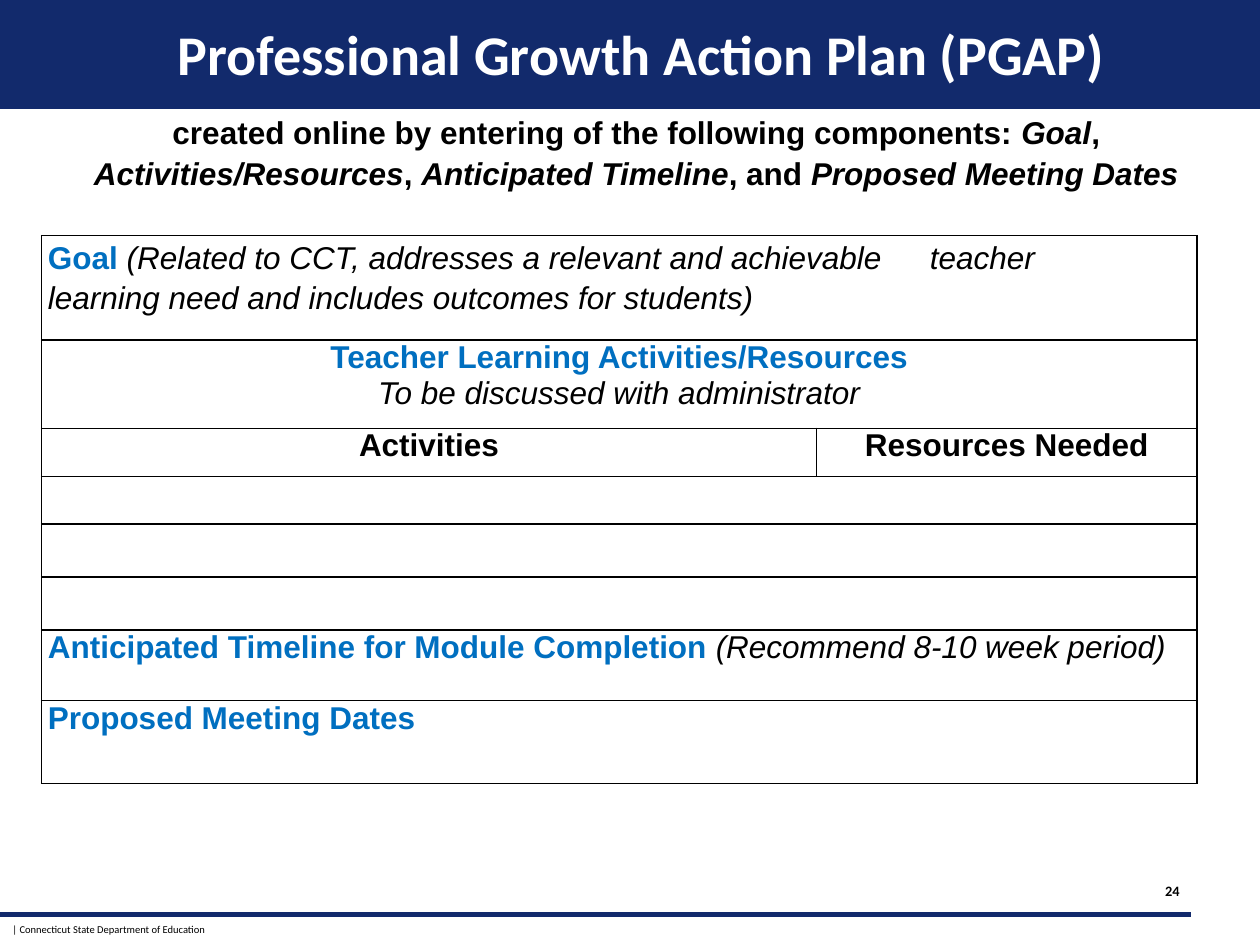
from lxml.etree import SubElement
from pptx import Presentation
from pptx.dml.color import RGBColor
from pptx.enum.shapes import MSO_CONNECTOR, MSO_SHAPE
from pptx.enum.text import MSO_ANCHOR, MSO_AUTO_SIZE, PP_ALIGN
from pptx.oxml.ns import qn
from pptx.util import Inches, Pt

NAVY = RGBColor(0x12, 0x2A, 0x6C)
BLUE = RGBColor(0x00, 0x6F, 0xC0)
BLACK = RGBColor(0x00, 0x00, 0x00)
WHITE = RGBColor(0xFF, 0xFF, 0xFF)

COLUMNS = [6.15, 3.02]
ROWS = [0.83, 0.7, 0.38, 0.38, 0.42, 0.42, 0.56, 0.66]
SPLIT_ROW = 2


def set_margins(item, x=0, y=0):
    item.margin_left = item.margin_right = Inches(x)
    item.margin_top = item.margin_bottom = Inches(y)


def add_run(p, text, size=18, color=BLACK, bold=False, italic=False, font="Arial"):
    r = p.add_run()
    r.text = text
    r.font.name, r.font.size = font, Pt(size)
    r.font.bold, r.font.italic = bold, italic
    r.font.color.rgb = color


def add_text_box(slide, x, y, w, h):
    tf = slide.shapes.add_textbox(Inches(x), Inches(y), Inches(w), Inches(h)).text_frame
    tf.word_wrap = True
    return tf


def indent(p, left, right=0):
    pPr = p._p.get_or_add_pPr()
    pPr.set("marL", str(Inches(left)))
    pPr.set("marR", str(Inches(right)))
    pPr.set("indent", "0")


def add_tab(p, position):
    tabs = SubElement(p._p.get_or_add_pPr(), qn("a:tabLst"))
    SubElement(tabs, qn("a:tab"), pos=str(Inches(position)), algn="l")


def add_header(slide, x, y, w, h):
    band = slide.shapes.add_shape(MSO_SHAPE.RECTANGLE, Inches(x), Inches(y), Inches(w), Inches(h))
    band.shadow.inherit = False
    band.fill.solid()
    band.fill.fore_color.rgb = NAVY
    band.line.color.rgb = NAVY
    band.line.width = Pt(2)
    slide.shapes._spTree.insert(2, band._element)

    title = slide.shapes.title
    title.left, title.top = Inches(x + 0.5), Inches(y + 0.05)
    title.width, title.height = Inches(w - 1), Inches(h - 0.1)
    tf = title.text_frame
    tf.auto_size = MSO_AUTO_SIZE.NONE
    tf.vertical_anchor = MSO_ANCHOR.MIDDLE
    set_margins(tf)
    p = tf.paragraphs[0]
    p.alignment = PP_ALIGN.CENTER
    p.line_spacing = Pt(37.9)
    indent(p, 0.18)
    add_run(p, "Professional Growth Action Plan (PGAP)", 32, WHITE, bold=True, font="Calibri")


def add_introduction(slide, x, y, w, h):
    tf = add_text_box(slide, x, y, w, h)
    set_margins(tf)
    p = tf.paragraphs[0]
    p.alignment = PP_ALIGN.CENTER
    p.line_spacing = 1.07
    for text, italic in [
        ("created online by entering of the following components: ", False),
        ("Goal", True),
        (", ", False),
        ("Activities/Resources", True),
        (", ", False),
        ("Anticipated Timeline", True),
        (", and ", False),
        ("Proposed Meeting Dates", True),
    ]:
        add_run(p, text, bold=True, italic=italic)


def add_borders(cell):
    tcPr = cell._tc.get_or_add_tcPr()
    for i, side in enumerate(("lnL", "lnR", "lnT", "lnB")):
        ln = tcPr.makeelement(qn(f"a:{side}"), {"w": str(Pt(1))})
        fill = SubElement(ln, qn("a:solidFill"))
        SubElement(fill, qn("a:srgbClr"), val=str(BLACK))
        tcPr.insert(i, ln)


def add_plan_table(slide, x, y):
    table = slide.shapes.add_table(
        len(ROWS), len(COLUMNS), Inches(x), Inches(y), Inches(sum(COLUMNS)), Inches(sum(ROWS))
    ).table
    table.first_row = table.horz_banding = False
    for column, width in zip(table.columns, COLUMNS):
        column.width = Inches(width)
    for i, height in enumerate(ROWS):
        table.rows[i].height = Inches(height)
        for cell in table.rows[i].cells:
            set_margins(cell)
            cell.fill.background()
            add_borders(cell)
        if i != SPLIT_ROW:
            table.cell(i, 0).merge(table.cell(i, 1))

    goal = table.cell(0, 0).text_frame.paragraphs[0]
    goal.line_spacing = 1.15
    indent(goal, 0.05, 0.8)
    add_tab(goal, 6.8)
    add_run(goal, "Goal ", color=BLUE, bold=True)
    add_run(goal, "(Related to CCT, addresses a relevant and achievable\tteacher "
                  "learning need and includes outcomes for students)", italic=True)

    tf = table.cell(1, 0).text_frame
    heading, note = tf.paragraphs[0], tf.add_paragraph()
    add_run(heading, "Teacher Learning Activities/Resources", color=BLUE, bold=True)
    add_run(note, "To be discussed with administrator", italic=True)
    heading.alignment = note.alignment = PP_ALIGN.CENTER

    for j, label in enumerate(["Activities", "Resources Needed"]):
        p = table.cell(SPLIT_ROW, j).text_frame.paragraphs[0]
        p.alignment = PP_ALIGN.CENTER
        add_run(p, label, bold=True)

    for i, label, note in [
        (6, "Anticipated Timeline for Module Completion", " (Recommend 8-10 week period)"),
        (7, "Proposed Meeting Dates", ""),
    ]:
        p = table.cell(i, 0).text_frame.paragraphs[0]
        indent(p, 0.05)
        add_run(p, label, color=BLUE, bold=True)
        if note:
            add_run(p, note, italic=True)


def add_footer(slide, x, y, w):
    rule = slide.shapes.add_connector(
        MSO_CONNECTOR.STRAIGHT, Inches(x), Inches(y), Inches(x + w), Inches(y)
    )
    rule.line.color.rgb = NAVY
    rule.line.width = Pt(3)
    SubElement(rule._element.spPr, qn("a:effectLst"))

    credit = add_text_box(slide, x, y + 0.02, 5, 0.2)
    add_run(credit.paragraphs[0], "| Connecticut State Department of Education", 6, font="Calibri")

    number = add_text_box(slide, x + w - 0.31, y - 0.31, 0.33, 0.25)
    set_margins(number, 0.04, 0.05)
    number.paragraphs[0].alignment = PP_ALIGN.CENTER
    add_run(number.paragraphs[0], "24", 8.2, bold=True, font="Calibri")


def main():
    prs = Presentation()
    prs.slide_width, prs.slide_height = Inches(10), Inches(7.5)
    slide = prs.slides.add_slide(prs.slide_layouts[5])
    add_header(slide, 0, 0, 10, 0.85)
    add_introduction(slide, 0.1, 0.88, 9.9, 0.62)
    add_plan_table(slide, 0.33, 1.87)
    add_footer(slide, 0, 7.26, 9.45)
    prs.save("out.pptx")


if __name__ == "__main__":
    main()
